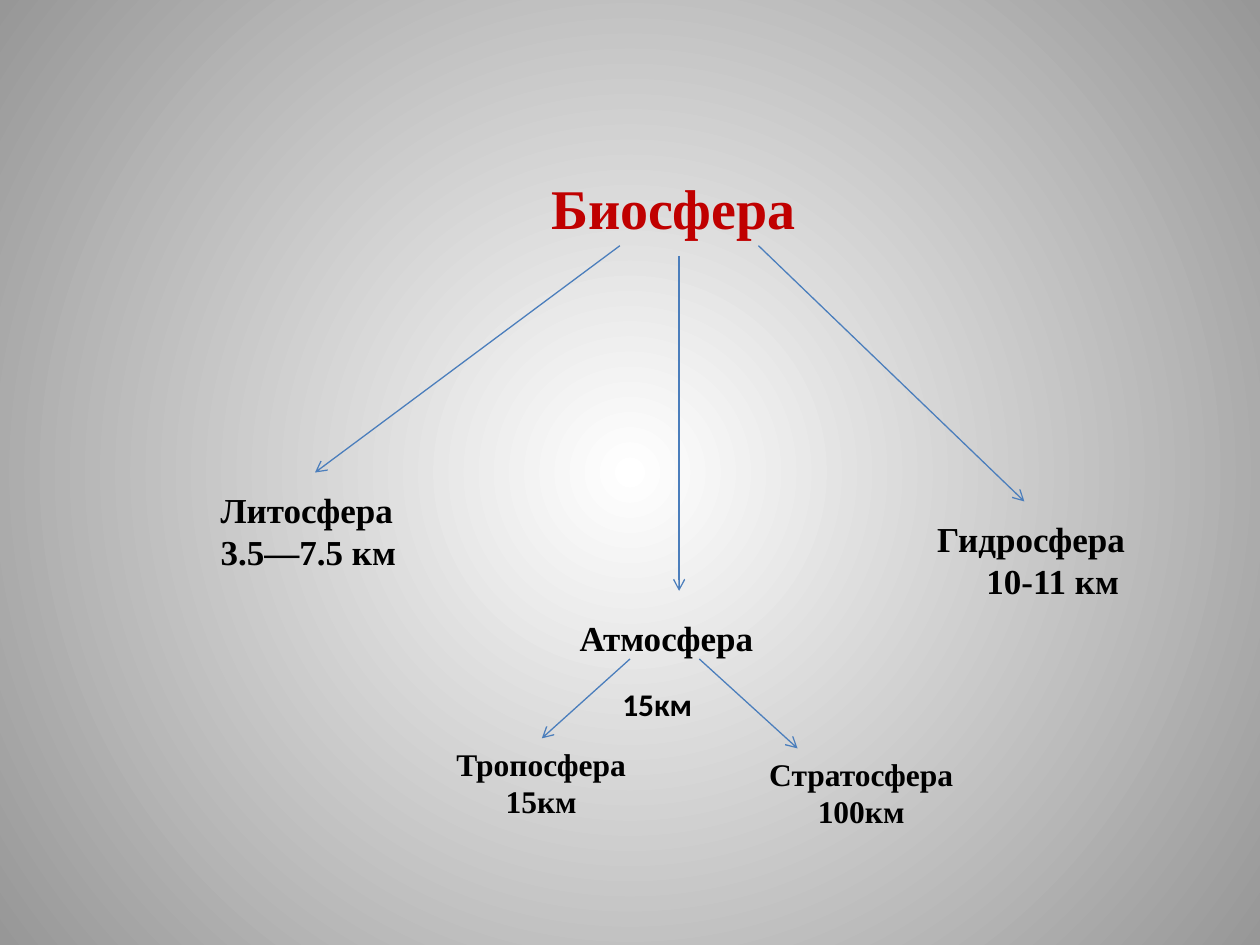
from lxml.etree import SubElement
from pptx import Presentation
from pptx.dml.color import RGBColor
from pptx.enum.shapes import MSO_CONNECTOR
from pptx.enum.text import MSO_ANCHOR, PP_ALIGN
from pptx.oxml import parse_xml
from pptx.oxml.ns import nsdecls, qn
from pptx.util import Inches, Pt

COLORS = {"title": "C00000", "text": "000000", "arrow": "4B7EBC",
          "inner": "FFFFFF", "outer": "979797"}
SERIF, SANS = "Times New Roman", "Calibri"
LEFT, MID = PP_ALIGN.LEFT, PP_ALIGN.CENTER


class Scheme:
    def __init__(self, deck):
        self.slide = deck.slides.add_slide(deck.slide_layouts[5])
        self.font = {"name": SERIF, "size": Pt(20), "bold": True}

    def glow(self):
        """Fill the background with a round gradient."""
        fill = self.slide.background.fill
        fill.solid()
        stops = "".join(
            f'<a:gs pos="{pos}"><a:srgbClr val="{COLORS[key]}"/></a:gs>'
            for pos, key in ((0, "inner"), (100000, "outer")))
        grad = parse_xml(
            f'<a:gradFill {nsdecls("a")} rotWithShape="1">'
            f'<a:gsLst>{stops}</a:gsLst><a:path path="circle">'
            '<a:fillToRect l="50000" t="50000" r="50000" b="50000"/>'
            '</a:path></a:gradFill>')
        solid = next(self.slide.element.iter(qn("a:solidFill")))
        solid.getparent().replace(solid, grad)

    def set_text(self, shape, lines, color="text", indent=0, **style):
        """Put (text, alignment) lines into a shape."""
        frame = shape.text_frame
        layout = {"word_wrap": True, "vertical_anchor": MSO_ANCHOR.TOP,
                  "margin_left": Inches(0.1 + indent)}
        for key, value in layout.items():
            setattr(frame, key, value)
        for i, (text, align) in enumerate(lines):
            para = frame.add_paragraph() if i else frame.paragraphs[0]
            para.alignment = align
            run = para.add_run()
            run.text = text
            for key, value in {**self.font, **style}.items():
                setattr(run.font, key, value)
            run.font.color.rgb = RGBColor.from_string(COLORS[color])

    def title(self, text, box, indent):
        shape = self.slide.shapes.title
        for key, value in zip(("left", "top", "width", "height"), box):
            setattr(shape, key, Inches(value))
        self.set_text(shape, [(text, MID)], "title", indent, size=Pt(32))

    def label(self, box, lines, **style):
        shape = self.slide.shapes.add_textbox(*map(Inches, box))
        self.set_text(shape, lines, **style)

    def arrow(self, start, end):
        shape = self.slide.shapes.add_connector(
            MSO_CONNECTOR.STRAIGHT, *map(Inches, start + end))
        shape.line.color.rgb = RGBColor.from_string(COLORS["arrow"])
        shape.line.width = Pt(0.75)
        props = shape.element.spPr
        SubElement(props.find(qn("a:ln")), qn("a:tailEnd"), type="arrow")
        SubElement(props, qn("a:effectLst"))


def main():
    deck = Presentation()
    deck.slide_width, deck.slide_height = Inches(10), Inches(7.5)
    scheme = Scheme(deck)
    scheme.glow()
    scheme.title("Биосфера", (0.86, 1.33, 8.75, 0.94), 0.22)

    for start, end in (
        ((6.02, 1.95), (8.13, 3.98)),
        ((4.92, 1.95), (2.5, 3.75)),
        ((5.39, 2.03), (5.39, 4.69)),
        ((5.55, 5.23), (6.33, 5.94)),
        ((5, 5.23), (4.3, 5.86)),
    ):
        scheme.arrow(start, end)

    scheme.label((1.17, 3.83, 3.05, 0.77),
                 [("Литосфера", LEFT), ("3.5—7.5 км", LEFT)], indent=0.48)
    scheme.label((4.22, 4.84, 2.97, 0.77), [("Атмосфера", LEFT)], indent=0.28)
    scheme.label((7.34, 4.06, 2.03, 0.77),
                 [("Гидросфера", LEFT), ("10-11 км", MID)])

    small = {"size": Pt(18)}
    scheme.label((3.2, 5.86, 2.19, 0.71),
                 [("Тропосфера", MID), ("15км", MID)], **small)
    scheme.label((5.86, 5.94, 1.95, 0.71),
                 [("Стратосфера", MID), ("100км", MID)], **small)
    scheme.label((4.84, 5.39, 0.78, 0.4), [("15км", LEFT)], name=SANS, **small)
    deck.save("out.pptx")


if __name__ == "__main__":
    main()
